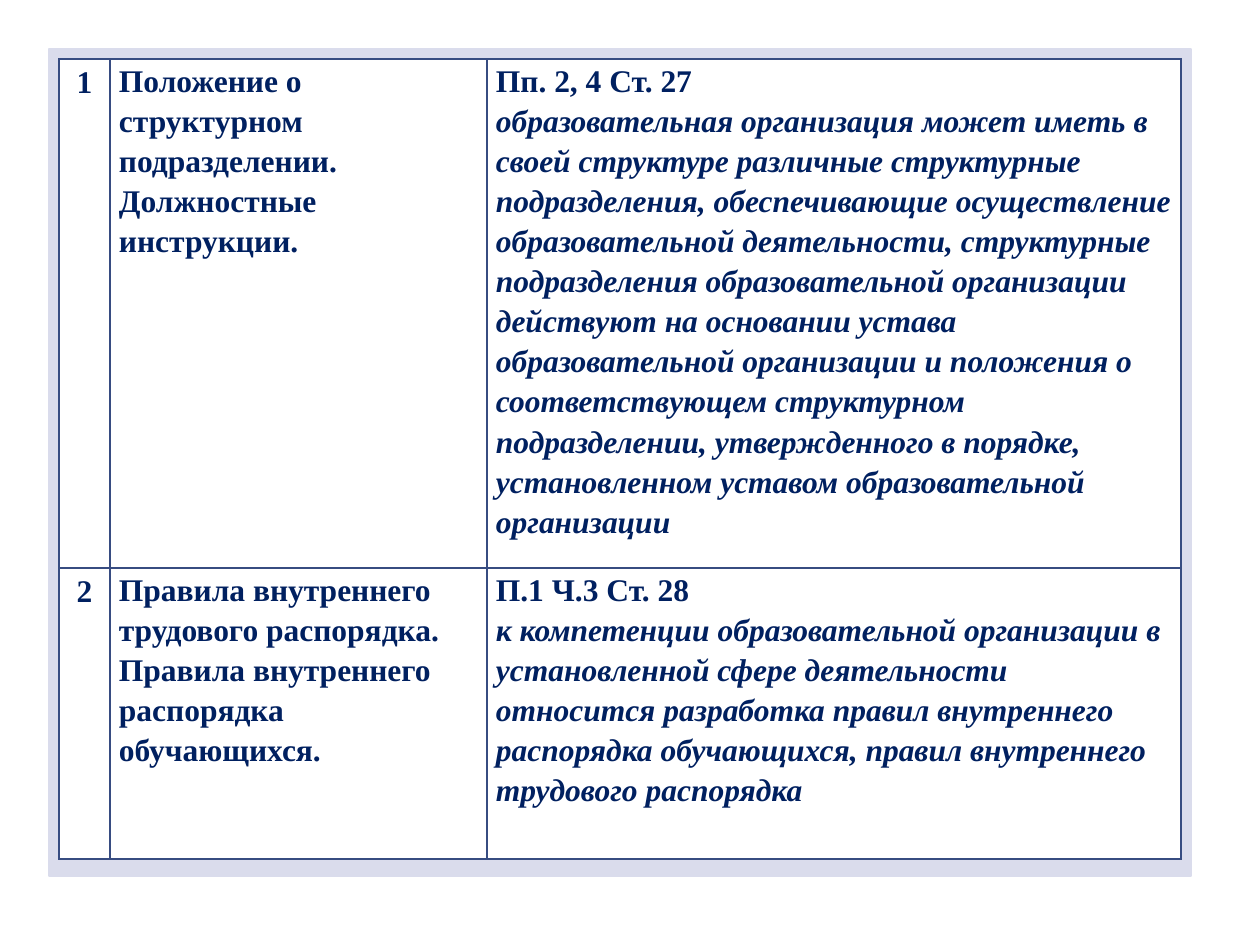
from lxml.etree import SubElement
from pptx import Presentation
from pptx.dml.color import RGBColor
from pptx.enum.shapes import MSO_SHAPE
from pptx.enum.text import PP_ALIGN
from pptx.oxml.ns import qn
from pptx.util import Emu, Pt

PX_PER_INCH = 126
FONT = "Times New Roman"
COLORS = {"frame": "DADCEC", "border": "374C81", "text": "002060", "cell": "FFFFFF"}
COL_WIDTHS = [51, 377, 694]
ROW_HEIGHTS = [509, 291]

# Each row: number, document titles, legal reference, quoted provisions
ROWS = [
    ("1",
     ["Положение о структурном", "подразделении.", "Должностные инструкции."],
     "Пп. 2, 4 Ст. 27",
     ["образовательная организация может иметь в своей структуре различные "
      "структурные подразделения, обеспечивающие осуществление образовательной "
      "деятельности, структурные подразделения образовательной организации "
      "действуют на основании устава образовательной организации и положения о "
      "соответствующем структурном подразделении, утвержденного в порядке, "
      "установленном уставом образовательной организации"]),
    ("2",
     ["Правила внутреннего трудового распорядка.",
      "Правила внутреннего распорядка обучающихся."],
     "П.1 Ч.3 Ст. 28",
     ["к компетенции образовательной организации в установленной сфере "
      "деятельности относится разработка правил внутреннего распорядка "
      "обучающихся, правил внутреннего",
      "трудового распорядка"]),
]


def px(n):
    return Emu(round(n * 914400 / PX_PER_INCH))


def color(name):
    return RGBColor.from_string(COLORS[name])


def add_frame(s, x, y, w, h):
    sp = s.shapes.add_shape(MSO_SHAPE.FLOWCHART_PROCESS, px(x), px(y), px(w), px(h))
    sp.shadow.inherit = False
    sp.fill.solid()
    sp.fill.fore_color.rgb = color("frame")
    sp.line.color.rgb = color("frame")
    sp.line.width = Pt(1)


def style_cell(cell):
    # Borders go before the fill in the cell properties
    tcPr = cell._tc.get_or_add_tcPr()
    for side in ("a:lnL", "a:lnR", "a:lnT", "a:lnB"):
        ln = SubElement(tcPr, qn(side), w=str(Pt(1)))
        fill = SubElement(ln, qn("a:solidFill"))
        SubElement(fill, qn("a:srgbClr"), val=COLORS["border"])
    cell.fill.solid()
    cell.fill.fore_color.rgb = color("cell")


def write_cell(cell, lines, italic_from=None):
    tf = cell.text_frame
    tf.text = "\n".join(lines)
    for i, p in enumerate(tf.paragraphs):
        p.font.name = FONT
        p.font.size = Pt(18)
        p.font.bold = True
        p.font.italic = italic_from is not None and i >= italic_from
        p.font.color.rgb = color("text")


def format_body(cell):
    cell.margin_left = cell.margin_right = px(9)
    cell.margin_top = cell.margin_bottom = 0
    for p in cell.text_frame.paragraphs:
        p.line_spacing = 1.15


def add_documents_table(s, x, y):
    table = s.shapes.add_table(len(ROWS), len(COL_WIDTHS), px(x), px(y),
                               px(sum(COL_WIDTHS)), px(sum(ROW_HEIGHTS))).table
    table.first_row = table.horz_banding = False
    for col, width in zip(table.columns, COL_WIDTHS):
        col.width = px(width)
    for row, height, content in zip(table.rows, ROW_HEIGHTS, ROWS):
        row.height = px(height)
        number, titles, reference, provisions = content
        number_cell, title_cell, law_cell = row.cells
        write_cell(number_cell, [number])
        number_cell.text_frame.paragraphs[0].alignment = PP_ALIGN.CENTER
        write_cell(title_cell, titles)
        write_cell(law_cell, [reference, *provisions], italic_from=1)
        for cell in (title_cell, law_cell):
            format_body(cell)
        for cell in row.cells:
            style_cell(cell)


def main():
    prs = Presentation()
    prs.slide_width, prs.slide_height = px(1260), px(945)
    s = prs.slides.add_slide(prs.slide_layouts[6])
    # Backing panel, then the table on it
    add_frame(s, 49, 49, 1142, 827)
    add_documents_table(s, 59, 59)
    prs.save("out.pptx")


if __name__ == "__main__":
    main()
